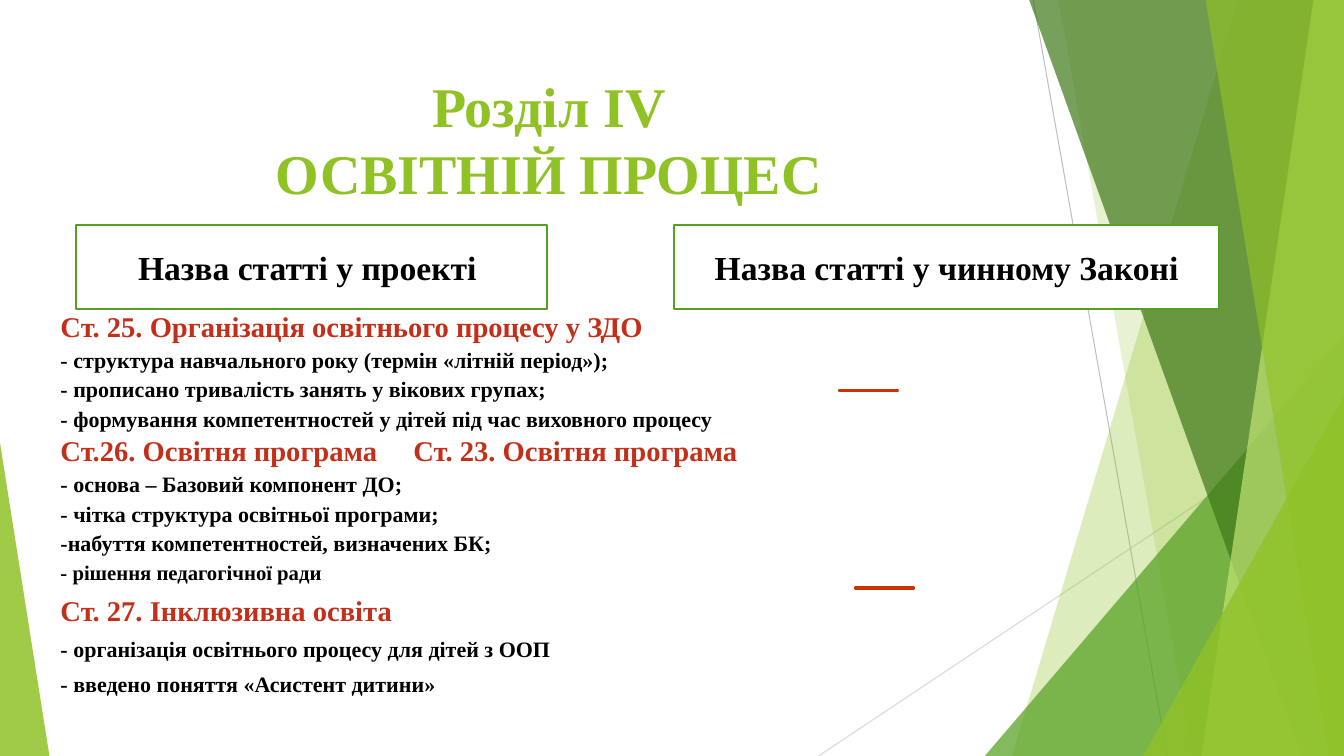
from dataclasses import dataclass
from lxml.etree import SubElement
from pptx import Presentation
from pptx.dml.color import RGBColor
from pptx.enum.shapes import MSO_CONNECTOR as Connector, MSO_SHAPE as Preset
from pptx.enum.text import MSO_ANCHOR as Anchor, MSO_AUTO_SIZE as AutoSize, PP_ALIGN as Align
from pptx.oxml.ns import qn
from pptx.util import Inches, Pt


@dataclass(frozen=True)
class Theme:
    font: str = "Times New Roman"
    lime: str = "90C226"
    green: str = "54A021"
    forest: str = "3F7819"
    pale: str = "C0E474"
    white: str = "FFFFFF"
    black: str = "000000"
    red: str = "C42F1A"
    dash: str = "CC3300"
    grey: str = "BFBFBF"
    light_grey: str = "D9D9D9"
    title: float = 40
    label: float = 24
    article: float = 20.4
    point: float = 15.7
    small: float = 14.8
    outline: float = 1.5
    hairline: float = 0.75


@dataclass(frozen=True)
class Box:
    left: int
    top: int
    width: int
    height: int

    def at(self, x, y):
        return round(self.left + self.width * x / 100), round(self.top + self.height * y / 100)

    def area(self, x, y, width, height):
        return Box(*self.at(x, y), round(self.width * width / 100), round(self.height * height / 100))

    def bounds(self):
        return self.left, self.top, self.width, self.height


THEME = Theme()
TAB_STOP = 52.1
ARTICLES = [
    (0.8, [
        ("Ст. 25. Організація освітнього процесу у ЗДО", THEME.article),
        ("- структура навчального року (термін «літній період»);", THEME.point),
        ("- прописано тривалість занять у вікових групах;", THEME.point),
        ("- формування компетентностей у дітей під час виховного процесу", THEME.point),
        ("Ст.26. Освітня програма\tСт. 23. Освітня програма", THEME.article),
        ("- основа – Базовий компонент ДО;", THEME.point),
        ("- чітка структура освітньої програми;", THEME.point),
        ("-набуття компетентностей, визначених БК;", THEME.point),
        ("- рішення педагогічної ради", THEME.small),
    ]),
    (1.0, [
        ("Ст. 27. Інклюзивна освіта", THEME.article),
        ("- організація освітнього процесу для дітей з ООП", THEME.point),
        ("- введено поняття «Асистент дитини»", THEME.point),
    ]),
]


def add_span(para, text, size, color):
    span = para.add_run()
    span.text = text
    span.font.name = THEME.font
    span.font.size = Pt(size)
    span.font.bold = True
    span.font.color.rgb = RGBColor.from_string(color)


def paint(shape, fill, opacity=100, outline=None):
    shape.shadow.inherit = False
    shape.fill.solid()
    shape.fill.fore_color.rgb = RGBColor.from_string(fill)
    if opacity < 100:
        color = shape.element.spPr.find(qn("a:solidFill"))[0]
        SubElement(color, qn("a:alpha")).set("val", str(opacity * 1000))
    if outline:
        shape.line.color.rgb = RGBColor.from_string(outline)
        shape.line.width = Pt(THEME.outline)
    else:
        shape.line.fill.background()


def add_line(page, start, end, color):
    line = page.shapes.add_connector(Connector.STRAIGHT, *start, *end)
    line.line.color.rgb = RGBColor.from_string(color)
    line.line.width = Pt(THEME.hairline)
    SubElement(line.element.spPr, qn("a:effectLst"))


def add_band(page, box, top_x, bottom_x, color, opacity):
    corners = [box.at(100, 0), box.at(100, 100), box.at(bottom_x, 100)]
    builder = page.shapes.build_freeform(*box.at(top_x, 0), scale=1.0)
    builder.add_line_segments(corners, close=True)
    paint(builder.convert_to_shape(), color, opacity)


def add_wedge(page, box, apex, color, opacity):
    wedge = page.shapes.add_shape(Preset.ISOSCELES_TRIANGLE, *box.bounds())
    wedge.adjustments[0] = apex
    paint(wedge, color, opacity)


def add_backdrop(page, box):
    add_line(page, box.at(76.88, 0), box.at(86.85, 100), THEME.grey)
    add_line(page, box.at(100, 53.73), box.at(60.9, 100), THEME.light_grey)
    add_band(page, box, 92.1, 75.3, THEME.lime, 30)
    add_band(page, box, 78.75, 88.73, THEME.lime, 20)
    add_wedge(page, box.area(73.28, 44.4, 26.72, 55.6), 1, THEME.green, 72)
    add_band(page, box, 76.58, 96.83, THEME.forest, 70)
    add_band(page, box, 97.73, 89.4, THEME.pale, 70)
    add_band(page, box, 89.7, 98.85, THEME.lime, 65)
    add_wedge(page, box.area(85.05, 52.4, 14.95, 47.6), 1, THEME.lime, 80)
    add_wedge(page, box.area(0, 58.53, 3.68, 41.47), 0, THEME.lime, 85)


def place_holder(holder, box, anchor):
    holder.left, holder.top, holder.width, holder.height = box.bounds()
    holder.element.getparent().append(holder.element)
    frame = holder.text_frame
    frame.word_wrap = True
    frame.auto_size = AutoSize.NONE
    frame.vertical_anchor = anchor
    return frame


def add_title(page, box):
    para = place_holder(page.shapes.title, box, Anchor.MIDDLE).paragraphs[0]
    para.alignment = Align.CENTER
    add_span(para, "Розділ ІV", THEME.title, THEME.lime)
    para.add_line_break()
    add_span(para, "ОСВІТНІЙ ПРОЦЕС", THEME.title, THEME.lime)


def add_label(page, box, preset, text):
    label = page.shapes.add_shape(preset, *box.bounds())
    paint(label, THEME.white, outline=THEME.green)
    label.text_frame.word_wrap = True
    label.text_frame.vertical_anchor = Anchor.MIDDLE
    para = label.text_frame.paragraphs[0]
    para.alignment = Align.CENTER
    add_span(para, text, THEME.label, THEME.black)


def add_articles(page, box):
    frame = place_holder(page.placeholders[1], box, Anchor.TOP)
    rows = [(spacing, *row) for spacing, group in ARTICLES for row in group]
    for index, (spacing, text, size) in enumerate(rows):
        para = frame.add_paragraph() if index else frame.paragraphs[0]
        para.alignment = Align.LEFT
        para.line_spacing = spacing
        para.space_before = Pt(6)
        props = para._p.get_or_add_pPr()
        props.set("marL", "0")
        props.set("indent", "0")
        SubElement(props, qn("a:buNone"))
        if "\t" in text:
            stop = SubElement(SubElement(props, qn("a:tabLst")), qn("a:tab"))
            stop.set("pos", str(round(box.width * TAB_STOP / 100)))
            stop.set("algn", "l")
        add_span(para, text, size, THEME.red if size == THEME.article else THEME.black)


def add_dash(page, box):
    dash = page.shapes.add_shape(Preset.MATH_MINUS, *box.bounds())
    paint(dash, THEME.dash, outline=THEME.dash)


def main():
    deck = Presentation()
    deck.slide_width, deck.slide_height = Inches(13.33), Inches(7.5)
    page = deck.slides.add_slide(deck.slide_layouts[1])
    whole = Box(0, 0, deck.slide_width, deck.slide_height)
    add_backdrop(page, whole)
    add_title(page, whole.area(5.63, 8.53, 70.43, 19.6))
    add_label(page, whole.area(5.63, 29.73, 35.1, 11.2),
              Preset.FLOWCHART_PROCESS, "Назва статті у проекті ")
    add_label(page, whole.area(50.18, 29.73, 40.5, 11.2),
              Preset.RECTANGLE, "Назва статті у чинному Законі")
    add_articles(page, whole.area(3.75, 41.07, 92.93, 51.87))
    for x, y in ((62.85, 77.47), (61.65, 51.33)):
        add_dash(page, whole.area(x, y, 5.93, 0.67))
    deck.save("out.pptx")


if __name__ == "__main__":
    main()
